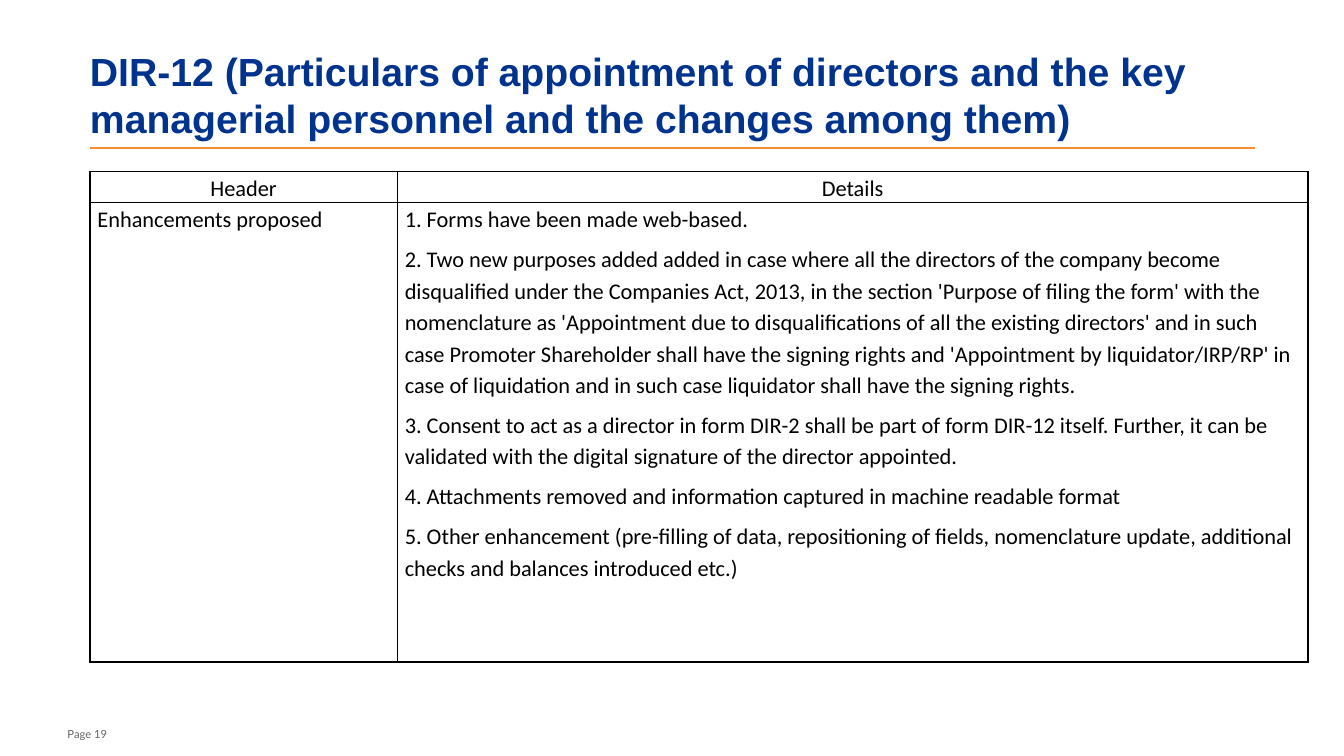
from dataclasses import dataclass

from lxml import etree
from pptx import Presentation
from pptx.dml.color import RGBColor
from pptx.enum.shapes import MSO_CONNECTOR
from pptx.enum.text import MSO_ANCHOR, PP_ALIGN
from pptx.oxml.ns import qn
from pptx.util import Pt

STRAIGHT = MSO_CONNECTOR.STRAIGHT
TOP, MIDDLE, BOTTOM = MSO_ANCHOR.TOP, MSO_ANCHOR.MIDDLE, MSO_ANCHOR.BOTTOM
LEFT, CENTER = PP_ALIGN.LEFT, PP_ALIGN.CENTER


@dataclass(frozen=True)
class Theme:
    title_color: str = "00338D"
    rule_color: str = "F68D2E"
    body_color: str = "000000"
    footer_color: str = "646464"
    title_font: str = "Arial"
    body_font: str = "Calibri"
    footer_font: str = "Lato"
    title_size: int = 28
    body_size: int = 16
    footer_size: int = 8
    line_width: int = 1


THEME = Theme()

TITLE = ("DIR-12 (Particulars of appointment of directors and the key "
         "managerial personnel and the changes among them)")
HEADINGS = ["Header", "Details"]
TOPIC = "Enhancements proposed"
ENHANCEMENTS = [
    "1. Forms have been made web-based.",
    "2. Two new purposes added added in case where all the directors of the company become "
    "disqualified under the Companies Act, 2013, in the section 'Purpose of filing the form' "
    "with the nomenclature as 'Appointment due to disqualifications of all the existing "
    "directors' and in such case Promoter Shareholder shall have the signing rights and "
    "'Appointment by liquidator/IRP/RP' in case of liquidation and in such case liquidator "
    "shall have the signing rights.",
    "3. Consent to act as a director in form DIR-2 shall be part of form DIR-12 itself. "
    "Further, it can be validated with the digital signature of the director appointed.",
    "4. Attachments removed and information captured in machine readable format",
    "5. Other enhancement (pre-filling of data, repositioning of fields, nomenclature update, "
    "additional checks and balances introduced etc.)",
]


def write_text(frame, paragraphs, *, font, size, color, bold=False, align=LEFT,
               anchor=TOP, line_spacing=1.0, gap=0, side_margin=0):
    frame.word_wrap = True
    frame.vertical_anchor = anchor
    frame.margin_left = frame.margin_right = Pt(side_margin)
    frame.margin_top = frame.margin_bottom = 0
    for index, text in enumerate(paragraphs):
        para = frame.paragraphs[0] if index == 0 else frame.add_paragraph()
        para.alignment = align
        para.line_spacing = line_spacing
        para.space_before = Pt(gap if index else 0)
        span = para.add_run()
        span.text = text
        span.font.name = font
        span.font.size = Pt(size)
        span.font.bold = bold
        span.font.color.rgb = RGBColor.from_string(color)


def add_title(page, left, top, width, height):
    box = page.shapes.add_textbox(Pt(left), Pt(top), Pt(width), Pt(height))
    write_text(box.text_frame, [TITLE], font=THEME.title_font, size=THEME.title_size,
               color=THEME.title_color, bold=True, anchor=MIDDLE)
    bottom = Pt(top + height)
    rule = page.shapes.add_connector(STRAIGHT, Pt(left), bottom, Pt(left + width), bottom)
    rule.line.color.rgb = RGBColor.from_string(THEME.rule_color)
    rule.line.width = Pt(THEME.line_width)
    etree.SubElement(rule.line._get_or_add_ln().getparent(), qn("a:effectLst"))


def add_borders(cell):
    properties = cell._tc.get_or_add_tcPr()
    for position, side in enumerate(("lnL", "lnR", "lnT", "lnB")):
        border = etree.Element(qn(f"a:{side}"), w=str(Pt(THEME.line_width)))
        fill = etree.SubElement(border, qn("a:solidFill"))
        etree.SubElement(fill, qn("a:srgbClr"), val=THEME.body_color)
        properties.insert(position, border)


def add_details_table(page, left, top, width, height):
    table = page.shapes.add_table(2, 2, Pt(left), Pt(top), Pt(width), Pt(height)).table
    table.first_row = table.horz_banding = False
    topic_width, heading_height = 219.6, 18.72
    for column, size in zip(table.columns, (topic_width, width - topic_width)):
        column.width = Pt(size)
    for row, size in zip(table.rows, (heading_height, height - heading_height)):
        row.height = Pt(size)
    rows = [[[heading] for heading in HEADINGS], [[TOPIC], ENHANCEMENTS]]
    for row_index, row in enumerate(rows):
        for column_index, paragraphs in enumerate(row):
            cell = table.cell(row_index, column_index)
            cell.fill.background()
            cell.margin_left = cell.margin_right = Pt(5.4)
            cell.margin_top = cell.margin_bottom = 0
            cell.vertical_anchor = TOP
            write_text(cell.text_frame, paragraphs, font=THEME.body_font,
                       size=THEME.body_size, color=THEME.body_color,
                       align=LEFT if row_index else CENTER, line_spacing=1.15, gap=6)
            add_borders(cell)


def add_footer(page, left, top, width, height):
    box = page.shapes.add_textbox(Pt(left), Pt(top), Pt(width), Pt(height))
    write_text(box.text_frame, ["Page 19"], font=THEME.footer_font,
               size=THEME.footer_size, color=THEME.footer_color, anchor=BOTTOM)


def main():
    deck = Presentation()
    deck.slide_width, deck.slide_height = Pt(960.48), Pt(540)
    page = deck.slides.add_slide(deck.slide_layouts[6])
    add_title(page, 64.3, 28.8, 832.8, 77)
    add_details_table(page, 64.3, 122.4, 870.48, 347.04)
    add_footer(page, 48.24, 513.36, 69.84, 15.84)
    deck.save("out.pptx")


if __name__ == "__main__":
    main()
